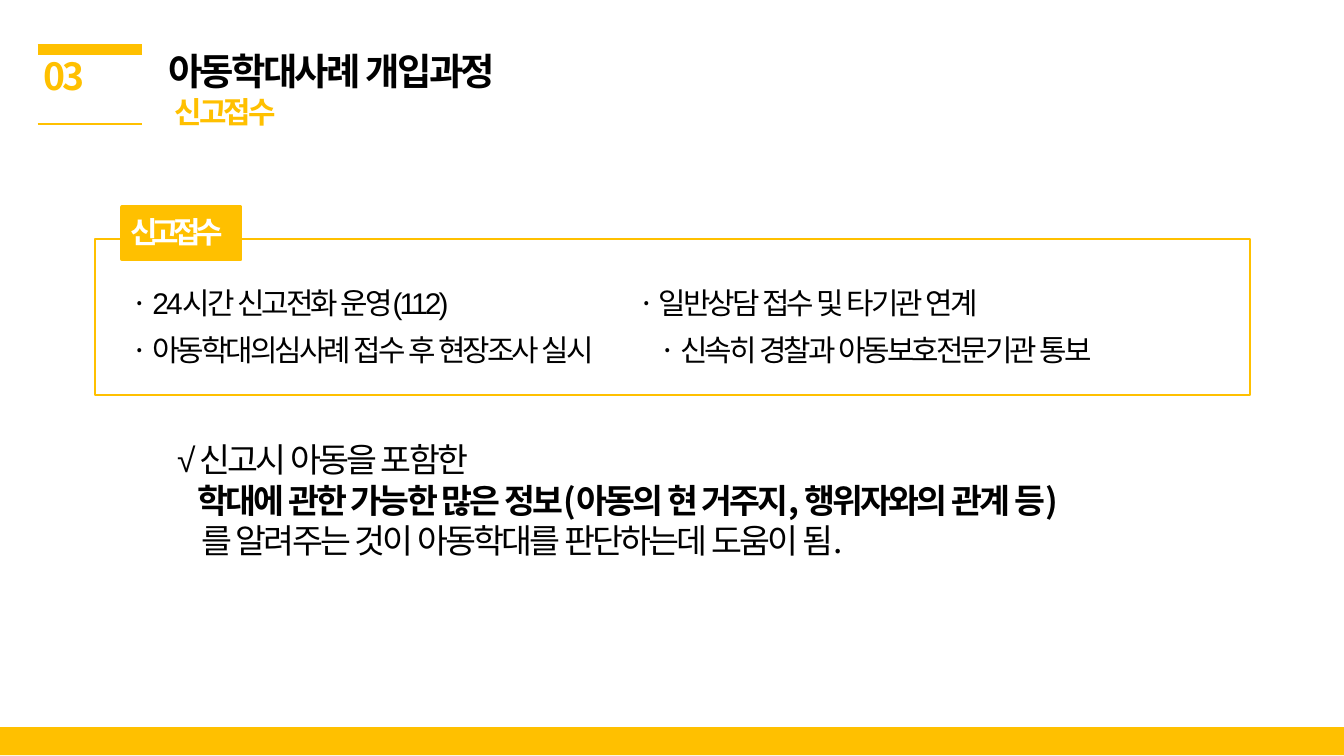
from lxml import etree
from pptx import Presentation
from pptx.dml.color import RGBColor
from pptx.enum import shapes as kinds, text as opts
from pptx.oxml import ns
from pptx.util import Inches, Pt

HUES = {"gold": "FFC000", "black": "000000", "white": "FFFFFF"}
KOREAN, LATIN = "Noto Sans CJK KR", "Arial"


def write(para, parts, size, hue="black", bold=False, track=-1.5):
    """Fill a paragraph with (text, font) parts in one style."""
    para.alignment = opts.PP_ALIGN.LEFT
    para.space_before = Pt(0)
    for words, face in parts:
        run = para.add_run()
        run.text = words
        font = run.font
        font.name, font.size, font.bold = face, Pt(size), bold
        font.color.rgb = RGBColor.from_string(HUES[hue])
        props = run._r.get_or_add_rPr()
        props.set("spc", str(int(track * 100)))
        east = etree.Element(ns.qn("a:ea"), typeface=LATIN)
        props.find(ns.qn("a:latin")).addnext(east)


def place(box, left, top, width, height):
    """Position a text holder and return its top-anchored frame."""
    box.left, box.top = Inches(left), Inches(top)
    box.width, box.height = Inches(width), Inches(height)
    frame = box.text_frame
    frame.word_wrap = True
    frame.auto_size = opts.MSO_AUTO_SIZE.NONE
    frame.vertical_anchor = opts.MSO_ANCHOR.TOP
    return frame


deck = Presentation()
deck.slide_width, deck.slide_height = Inches(10), Inches(10 * 9 / 16)
slide = deck.slides.add_slide(deck.slide_layouts[1])
tree = slide.shapes
title, body = slide.placeholders

# Header rules
for y, weight in ((0.37, 6), (0.92, 1)):
    rule = tree.add_connector(kinds.MSO_CONNECTOR.STRAIGHT,
                              Inches(0.28), Inches(y), Inches(1.06), Inches(y))
    rule.line.color.rgb = RGBColor.from_string(HUES["gold"])
    rule.line.width = Pt(weight)
    etree.SubElement(rule._element.spPr, ns.qn("a:effectLst"))

# Footer band, list frame and tag: place, fill, outline weight
panels = []
for area, solid, weight in (
    ((0, 5.41, 10, 0.21), True, 0),
    ((0.71, 1.78, 8.59, 1.16), False, 1),
    ((0.91, 1.54, 0.88, 0.39), True, 2),
):
    panel = tree.add_shape(kinds.MSO_SHAPE.RECTANGLE, *map(Inches, area))
    panel.shadow.inherit = False
    if solid:
        panel.fill.solid()
        panel.fill.fore_color.rgb = RGBColor.from_string(HUES["gold"])
    else:
        panel.fill.background()
    if weight:
        panel.line.color.rgb = RGBColor.from_string(HUES["gold"])
        panel.line.width = Pt(weight)
    else:
        panel.line.fill.background()
    panels.append(panel)

# Tag label, section number and title
tag = place(tree.add_textbox(0, 0, 0, 0), 0.87, 1.54, 0.98, 0.37)
write(tag.paragraphs[0], [("신고접수", KOREAN)], 16, "white", True, -3)

number = place(tree.add_textbox(0, 0, 0, 0), 0.04, 0.35, 0.87, 0.44)
write(number.paragraphs[0], [("03", KOREAN)], 20, "gold", True)
number.paragraphs[0].alignment = opts.PP_ALIGN.CENTER

head = place(title, 1.15, 0.31, 7.17, 0.71)
write(head.paragraphs[0], [("아동학대사례 개입과정", KOREAN)], 20, bold=True)
sub = head.add_paragraph()
sub._p.get_or_add_pPr().set("marL", str(Inches(0.05)))
write(sub, [("신고접수", KOREAN)], 16, "gold", True)

# Two-column list
items = place(body, 0.88, 1.99, 8.45, 0.8)
tree._spTree.append(body._element)  # above the frame
rows = (
    ("24시간 신고전화 운영(112)", 3.77, "일반상담 접수 및 타기관 연계"),
    ("아동학대의심사례 접수 후 현장조사 실시", 3.93, "신속히 경찰과 아동보호전문기관 통보"),
)
for i, (first, stop, second) in enumerate(rows):
    para = items.add_paragraph() if i else items.paragraphs[0]
    props = para._p.get_or_add_pPr()
    for key, value in (("marL", 0), ("indent", 0), ("defTabSz", Inches(stop))):
        props.set(key, str(value))
    etree.SubElement(props, ns.qn("a:buNone"))
    tabs = etree.SubElement(props, ns.qn("a:tabLst"))
    etree.SubElement(tabs, ns.qn("a:tab"), pos=str(Inches(stop)), algn="l")
    para.line_spacing = 1.3
    write(para, [("· ", KOREAN), (first + "\t", LATIN),
                 ("· ", KOREAN), (second, LATIN)], 16)

# Note
note = place(tree.add_textbox(0, 0, 0, 0), 1.22, 3.22, 7.56, 1.01)
lines = (
    ("√ 신고시 아동을 포함한", 0, False),
    ("학대에 관한 가능한 많은 정보(아동의 현 거주지, 행위자와의 관계 등)", 0.15, True),
    ("를 알려주는 것이 아동학대를 판단하는데 도움이 됨.", 0.18, False),
)
for i, (words, inset, bold) in enumerate(lines):
    para = note.add_paragraph() if i else note.paragraphs[0]
    para._p.get_or_add_pPr().set("marL", str(Inches(inset)))
    write(para, [(words, KOREAN)], 18, bold=bold)

deck.save("out.pptx")
